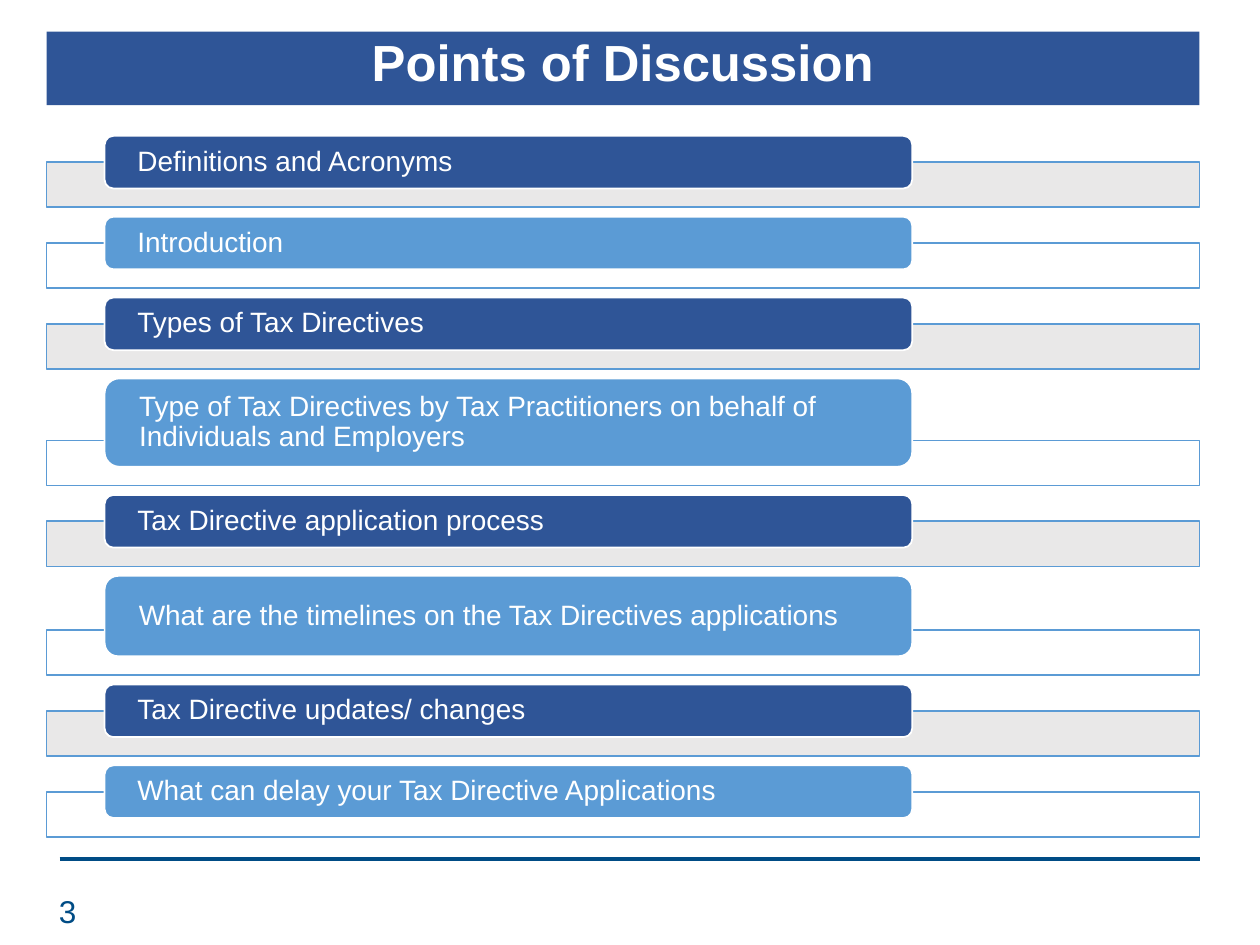
from lxml.etree import SubElement
from pptx import Presentation
from pptx.dml.color import RGBColor
from pptx.enum.shapes import MSO_CONNECTOR, MSO_SHAPE
from pptx.enum.text import MSO_ANCHOR, PP_ALIGN
from pptx.oxml.ns import qn
from pptx.util import Cm, Pt

TITLE = "Points of Discussion"
PAGE_NUMBER = "3"
SHORT, MEDIUM, TALL = 1.06, 1.62, 1.78
TOPICS = [
    ("Definitions and Acronyms", SHORT),
    ("Introduction", SHORT),
    ("Types of Tax Directives", SHORT),
    ("Type of Tax Directives by Tax Practitioners on behalf of "
     "Individuals and Employers", TALL),
    ("Tax Directive application process", SHORT),
    ("What are the timelines on the Tax Directives applications", MEDIUM),
    ("Tax Directive updates/ changes", SHORT),
    ("What can delay your Tax Directive Applications", SHORT),
]

WHITE = RGBColor(0xFF, 0xFF, 0xFF)
GREY = RGBColor(0xE7, 0xE6, 0xE6)
DARK_BLUE = RGBColor(0x2F, 0x55, 0x97)
LIGHT_BLUE = RGBColor(0x5B, 0x9B, 0xD5)
NAVY = RGBColor(0x00, 0x4C, 0x85)
STYLES = [(DARK_BLUE, GREY), (LIGHT_BLUE, WHITE)]

FONT = "Arial"
BAR_LEFT, BAR_WIDTH, BAR_HEIGHT = 0.94, 23.24, 0.91
TAB_LEFT, TAB_WIDTH = 2.11, 16.28
FIRST_TOP, OVERLAP, GAP = 2.74, 0.53, 0.19
TAB_INSET = 0.61


def add_box(slide, kind, left, top, width, height, fill, line=None):
    shape = slide.shapes.add_shape(kind, Cm(left), Cm(top), Cm(width), Cm(height))
    shape.shadow.inherit = False
    shape.fill.solid()
    shape.fill.fore_color.rgb = fill
    if line is None:
        shape.line.fill.background()
    else:
        shape.line.color.rgb = line
        shape.line.width = Pt(1)
    return shape


def write(shape, text, size, color, anchor, align=PP_ALIGN.LEFT, bold=False, spacing=0.9):
    frame = shape.text_frame
    frame.word_wrap = True
    frame.vertical_anchor = anchor
    paragraph = frame.paragraphs[0]
    paragraph.alignment = align
    paragraph.line_spacing = spacing
    run = paragraph.add_run()
    run.text = text
    run.font.name = FONT
    run.font.size = Pt(size)
    run.font.bold = bold
    run.font.color.rgb = color
    return frame


def set_opacity(shape, percent):
    color = shape.fill._xPr.find(qn("a:solidFill"))[0]
    SubElement(color, qn("a:alpha")).set("val", str(percent * 1000))


def add_topic(slide, top, text, height, tab_fill, bar_fill):
    bar_top = top + height - OVERLAP
    bar = add_box(slide, MSO_SHAPE.RECTANGLE, BAR_LEFT, bar_top,
                  BAR_WIDTH, BAR_HEIGHT, bar_fill, LIGHT_BLUE)
    set_opacity(bar, 90)
    tab = add_box(slide, MSO_SHAPE.ROUNDED_RECTANGLE, TAB_LEFT, top,
                  TAB_WIDTH, height, tab_fill, WHITE)
    frame = write(tab, text, 16, WHITE, MSO_ANCHOR.MIDDLE)
    frame.margin_left = frame.margin_right = Cm(TAB_INSET)
    frame.margin_top = frame.margin_bottom = 0
    return bar_top + BAR_HEIGHT + GAP


def main():
    presentation = Presentation()
    presentation.slide_width = Cm(25.4)
    presentation.slide_height = Cm(19.05)
    slide = presentation.slides.add_slide(presentation.slide_layouts[6])

    rule = slide.shapes.add_connector(
        MSO_CONNECTOR.STRAIGHT, Cm(1.2), Cm(17.32), Cm(24.2), Cm(17.32))
    rule.line.color.rgb = NAVY
    rule.line.width = Pt(2)
    SubElement(rule._element.spPr, qn("a:effectLst"))

    banner = add_box(slide, MSO_SHAPE.RECTANGLE, BAR_LEFT, 0.64, BAR_WIDTH, 1.48, DARK_BLUE)
    write(banner, TITLE, 29, WHITE, MSO_ANCHOR.TOP, PP_ALIGN.CENTER, bold=True)

    number = slide.shapes.add_textbox(Cm(BAR_LEFT), Cm(17.86), Cm(1.17), Cm(1.02))
    write(number, PAGE_NUMBER, 18, NAVY, MSO_ANCHOR.MIDDLE, spacing=1.0)

    top = FIRST_TOP
    for index, (text, height) in enumerate(TOPICS):
        top = add_topic(slide, top, text, height, *STYLES[index % len(STYLES)])

    presentation.save("out.pptx")


if __name__ == "__main__":
    main()
